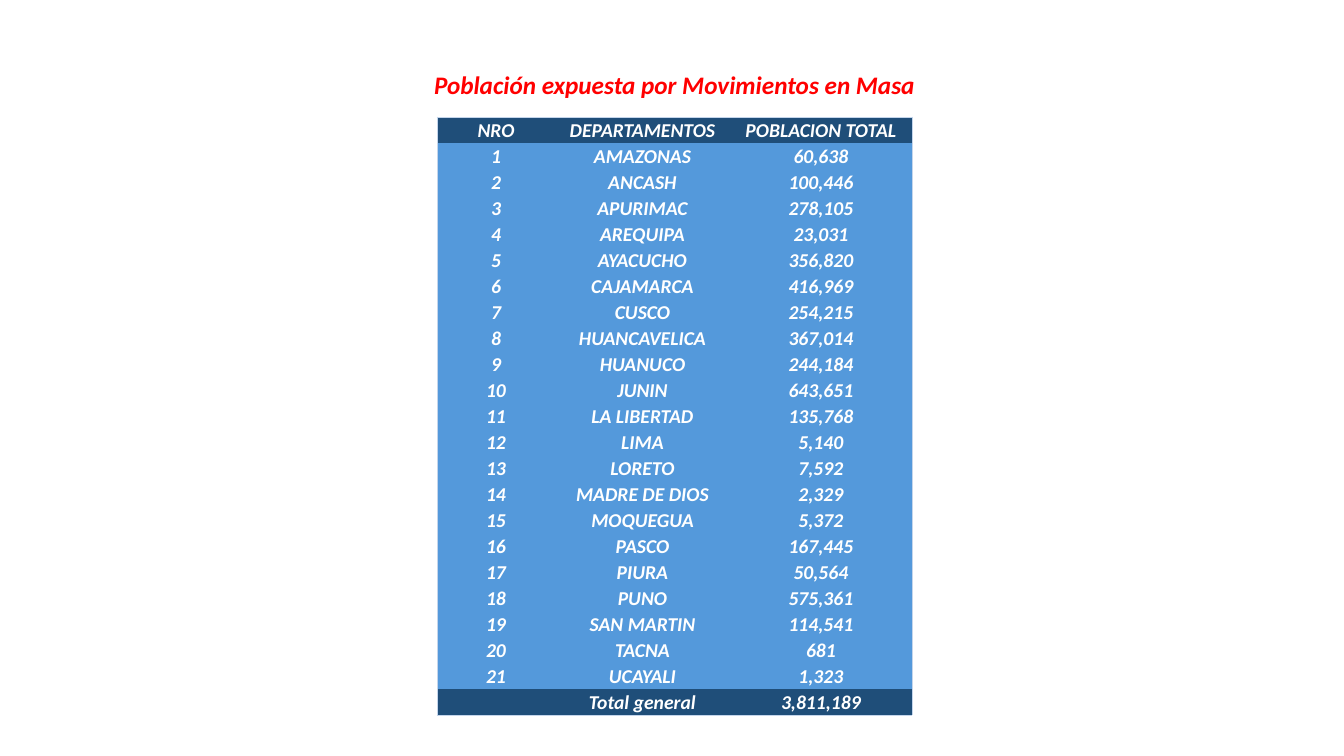
from dataclasses import dataclass

from lxml.etree import SubElement
from pptx import Presentation
from pptx.dml.color import RGBColor as Color
from pptx.enum.text import MSO_ANCHOR as Anchor, MSO_AUTO_SIZE as AutoSize, PP_ALIGN as Align
from pptx.oxml.ns import qn
from pptx.util import Pt


@dataclass(frozen=True)
class Theme:
    font: str = "Calibri"
    title_color: str = "FF0000"
    cell_text: str = "FFFFFF"
    band: str = "1F4E79"
    body: str = "5499DB"
    border: str = "C4D5EB"
    title_size: int = 18
    cell_size: int = 14
    border_width: float = 0.5


class SlideBuilder:
    EMU_PER_PX = 914400 / 100.8

    def __init__(self, theme, width, height):
        self.theme = theme
        self.presentation = Presentation()
        self.presentation.slide_width = self.px(width)
        self.presentation.slide_height = self.px(height)
        self.slide = self.presentation.slides.add_slide(self.presentation.slide_layouts[6])

    def px(self, length):
        return round(length * self.EMU_PER_PX)

    def label(self, paragraph, text, size, color):
        paragraph.alignment = Align.CENTER
        if not text:
            SubElement(paragraph._p, qn("a:endParaRPr"), sz=str(size * 100))
            return
        run = paragraph.add_run()
        run.text = text
        formats = {"name": self.theme.font, "size": Pt(size), "bold": True, "italic": True}
        for name, value in formats.items():
            setattr(run.font, name, value)
        run.font.color.rgb = Color.from_string(color)

    def title(self, text, left, top, width, height):
        shape = self.slide.shapes.add_textbox(*map(self.px, (left, top, width, height)))
        shape.text_frame.word_wrap = False
        shape.text_frame.auto_size = AutoSize.SHAPE_TO_FIT_TEXT
        self.label(shape.text_frame.paragraphs[0], text, self.theme.title_size, self.theme.title_color)

    def borders(self, cell, outer_edges):
        properties = cell._tc.get_or_add_tcPr()
        for tag, is_outer in outer_edges.items():
            line = SubElement(properties, qn(f"a:{tag}"), w=str(Pt(self.theme.border_width)))
            if is_outer:
                fill = SubElement(line, qn("a:solidFill"))
                SubElement(fill, qn("a:srgbClr"), val=self.theme.border)
            else:
                SubElement(line, qn("a:noFill"))

    def table(self, rows, left, top, column_widths, row_height):
        last_row, last_column = len(rows) - 1, len(column_widths) - 1
        size = (sum(column_widths), row_height * len(rows))
        table = self.slide.shapes.add_table(
            len(rows), len(column_widths), *map(self.px, (left, top, *size))
        ).table
        table.first_row = table.horz_banding = False
        for column, width in zip(table.columns, column_widths):
            column.width = self.px(width)
        margins = {"margin_left": 1, "margin_right": 1, "margin_top": 1, "margin_bottom": 0}
        for row_index, values in enumerate(rows):
            table.rows[row_index].height = self.px(row_height)
            fill = self.theme.band if row_index in (0, last_row) else self.theme.body
            for column_index, text in enumerate(values):
                cell = table.cell(row_index, column_index)
                cell.vertical_anchor = Anchor.MIDDLE
                for name, value in margins.items():
                    setattr(cell, name, self.px(value))
                self.borders(cell, {
                    "lnL": column_index == 0,
                    "lnR": column_index == last_column,
                    "lnT": row_index == 0,
                    "lnB": row_index == last_row,
                })
                cell.fill.solid()
                cell.fill.fore_color.rgb = Color.from_string(fill)
                self.label(cell.text_frame.paragraphs[0], text, self.theme.cell_size, self.theme.cell_text)


POPULATION = {
    "AMAZONAS": 60638,
    "ANCASH": 100446,
    "APURIMAC": 278105,
    "AREQUIPA": 23031,
    "AYACUCHO": 356820,
    "CAJAMARCA": 416969,
    "CUSCO": 254215,
    "HUANCAVELICA": 367014,
    "HUANUCO": 244184,
    "JUNIN": 643651,
    "LA LIBERTAD": 135768,
    "LIMA": 5140,
    "LORETO": 7592,
    "MADRE DE DIOS": 2329,
    "MOQUEGUA": 5372,
    "PASCO": 167445,
    "PIURA": 50564,
    "PUNO": 575361,
    "SAN MARTIN": 114541,
    "TACNA": 681,
    "UCAYALI": 1323,
}


def main():
    builder = SlideBuilder(Theme(), 1344, 756)
    builder.title("Población expuesta por Movimientos en Masa", 421, 64, 507, 40)
    departments = [
        (str(number), name, f"{people:,}")
        for number, (name, people) in enumerate(POPULATION.items(), 1)
    ]
    rows = [
        ("NRO", "DEPARTAMENTOS", "POBLACION TOTAL"),
        *departments,
        ("", "Total general", f"{sum(POPULATION.values()):,}"),
    ]
    builder.table(rows, 437, 117, (118, 175, 182), 26)
    builder.presentation.save("out.pptx")


if __name__ == "__main__":
    main()
